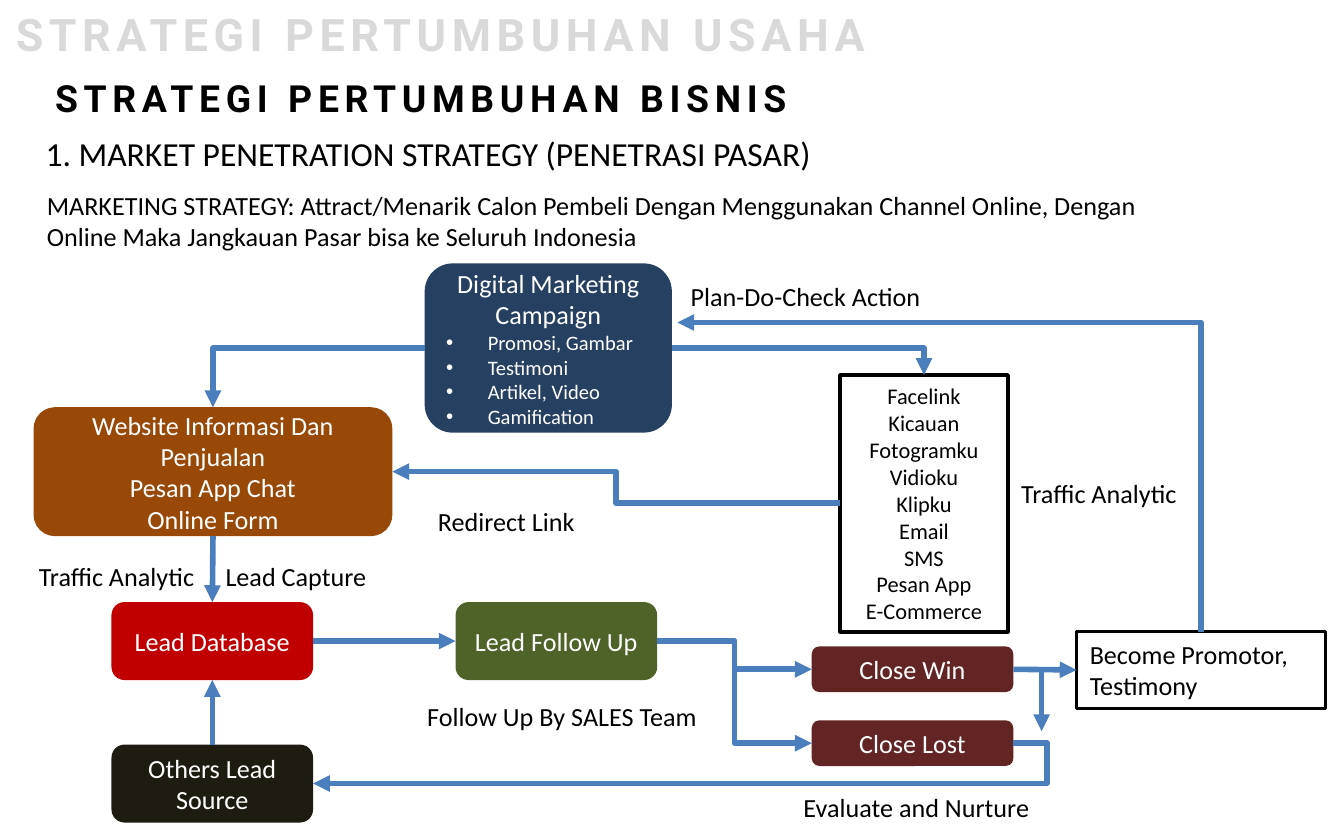
from lxml import etree
from pptx import Presentation
from pptx.dml.color import RGBColor
from pptx.enum import shapes, text
from pptx.oxml import ns
from pptx.util import Inches, Pt

BLACK, WHITE, BLUE = "000000", "FFFFFF", "4B7EBC"
LEFT, CENTER = text.PP_ALIGN.LEFT, text.PP_ALIGN.CENTER
TOP, MIDDLE = text.MSO_ANCHOR.TOP, text.MSO_ANCHOR.MIDDLE
ELBOW, STRAIGHT = shapes.MSO_CONNECTOR.ELBOW, shapes.MSO_CONNECTOR.STRAIGHT
SITE_TOP, SITE_LEFT, SITE_BOTTOM, SITE_RIGHT = range(4)


def write_text(shape, lines, size, color, align=LEFT, anchor=TOP, font="Calibri", spacing=None):
    """Fill a shape with one paragraph per line; spacing marks a bold, letter-spaced heading."""
    frame = shape.text_frame
    frame.vertical_anchor = anchor
    for index, line in enumerate(lines):
        paragraph = frame.add_paragraph() if index else frame.paragraphs[0]
        paragraph.alignment = align
        run = paragraph.add_run()
        run.text = line
        run.font.name = font
        run.font.size = Pt(size)
        run.font.color.rgb = RGBColor.from_string(color)
        if spacing:
            run.font.bold = True
            run.font._element.set("spc", str(spacing * 100))


def connect(kind, start, end, arrow="tailEnd", preset=None, adjust=None):
    """Draw an arrow; each end is a (shape, site) pair or an (x, y) point in inches."""
    line = slide.shapes.add_connector(kind, 0, 0, 0, 0)
    if isinstance(start[0], (int, float)):
        line.begin_x, line.begin_y = map(Inches, start)
    else:
        line.begin_connect(*start)
    if isinstance(end[0], (int, float)):
        line.end_x, line.end_y = map(Inches, end)
    else:
        line.end_connect(*end)
    line.line.color.rgb = RGBColor.from_string(BLUE)
    line.line.width = Pt(3)
    properties = line._element.spPr
    outline = properties.find(ns.qn("a:ln"))
    etree.SubElement(outline, ns.qn("a:" + arrow), type="triangle")
    etree.SubElement(properties, ns.qn("a:effectLst"))
    geometry = properties.find(ns.qn("a:prstGeom"))
    if preset:
        geometry.set("prst", preset)
    if adjust is not None:
        guides = geometry.find(ns.qn("a:avLst"))
        etree.SubElement(guides, ns.qn("a:gd"), name="adj1", fmla=f"val {adjust}")


presentation = Presentation()
presentation.slide_width, presentation.slide_height = Inches(10), Inches(6.25)
slide = presentation.slides.add_slide(presentation.slide_layouts[5])

# Headings
title = slide.shapes.title
title.left, title.top, title.width, title.height = map(Inches, (0.31, 0.51, 9.42, 0.44))
write_text(title, ["STRATEGI PERTUMBUHAN BISNIS"], 20, BLACK, font="Roboto", spacing=3)
banner = slide.shapes.add_textbox(*map(Inches, (0.02, 0, 10, 0.5)))
banner.text_frame.word_wrap = True
write_text(banner, ["STRATEGI PERTUMBUHAN USAHA"], 24, "D9D9D9", font="Roboto", spacing=3)

# Plain text and arrow labels: left, top, width, height, size, wrap, wording
labels = [
    (0.24, 0.94, 5.95, 0.4, 18, False, "1. MARKET PENETRATION STRATEGY (PENETRASI PASAR)"),
    (0.25, 1.36, 8.67, 0.57, 14, True,
     "MARKETING STRATEGY: Attract/Menarik Calon Pembeli Dengan Menggunakan Channel Online, "
     "Dengan Online Maka Jangkauan Pasar bisa ke Seluruh Indonesia"),
    (3.16, 3.71, 1.23, 0.34, 14, False, "Redirect Link"),
    (3.08, 5.16, 2.22, 0.34, 14, False, "Follow Up By SALES Team"),
    (1.58, 4.12, 1.26, 0.34, 14, False, "Lead Capture"),
    (0.19, 4.12, 1.38, 0.34, 14, False, "Traffic Analytic"),
    (7.5, 3.5, 1.38, 0.34, 14, False, "Traffic Analytic"),
    (5.04, 2.04, 1.93, 0.34, 14, False, "Plan-Do-Check Action"),
    (5.88, 5.84, 1.96, 0.34, 14, True, "Evaluate and Nurture"),
]
for left, top, width, height, size, wrap, wording in labels:
    label = slide.shapes.add_textbox(*map(Inches, (left, top, width, height)))
    label.text_frame.word_wrap = wrap
    write_text(label, [wording], size, BLACK)

# Filled steps: left, top, width, height, fill, lines
steps = {
    "campaign": (3.16, 1.96, 1.84, 1.26, "254061",
                 ["Digital Marketing Campaign", "Promosi, Gambar", "Testimoni",
                  "Artikel, Video", "Gamification"]),
    "website": (0.25, 3.03, 2.67, 0.96, "984807",
                ["Website Informasi Dan Penjualan", "Pesan App Chat", "Online Form"]),
    "database": (0.83, 4.48, 1.5, 0.58, "C00000", ["Lead Database"]),
    "follow_up": (3.39, 4.48, 1.5, 0.58, "4F6228", ["Lead Follow Up"]),
    "win": (6.04, 4.81, 1.5, 0.34, "632523", ["Close Win"]),
    "lost": (6.04, 5.36, 1.5, 0.34, "632523", ["Close Lost"]),
    "others": (0.83, 5.54, 1.5, 0.58, "1E1C11", ["Others Lead Source"]),
}
boxes = {}
for name, (left, top, width, height, fill, lines) in steps.items():
    box = slide.shapes.add_shape(shapes.MSO_SHAPE.ROUNDED_RECTANGLE,
                                 *map(Inches, (left, top, width, height)))
    box.shadow.inherit = False
    box.fill.solid()
    box.fill.fore_color.rgb = RGBColor.from_string(fill)
    box.line.fill.background()
    write_text(box, lines, 14, WHITE, CENTER, MIDDLE)
    boxes[name] = box

for paragraph in boxes["campaign"].text_frame.paragraphs[1:]:
    paragraph.alignment = LEFT
    paragraph.runs[0].font.size = Pt(11)
    bullet = paragraph._p.get_or_add_pPr()
    bullet.set("marL", str(Inches(0.31)))
    bullet.set("indent", str(-Inches(0.31)))
    etree.SubElement(bullet, ns.qn("a:buFont"), typeface="Arial")
    etree.SubElement(bullet, ns.qn("a:buChar"), char="•")

# Outlined boxes: left, top, width, height, line width, size, align, anchor, lines
outlined = {
    "channels": (6.25, 2.79, 1.25, 1.91, 2, 12, CENTER, MIDDLE,
                 ["Facelink", "Kicauan", "Fotogramku", "Vidioku", "Klipku", "Email", "SMS",
                  "Pesan App", "E-Commerce"]),
    "promotor": (8.01, 4.7, 1.85, 0.57, 1.5, 14, LEFT, TOP, ["Become Promotor, Testimony"]),
}
for name, (left, top, width, height, weight, size, align, anchor, lines) in outlined.items():
    box = slide.shapes.add_shape(shapes.MSO_SHAPE.RECTANGLE,
                                 *map(Inches, (left, top, width, height)))
    box.shadow.inherit = False
    box.fill.background()
    box.line.color.rgb = RGBColor.from_string(BLACK)
    box.line.width = Pt(weight)
    write_text(box, lines, size, BLACK, align, anchor)
    boxes[name] = box

# Straight arrows
for start, start_site, end, end_site in [
    ("website", SITE_BOTTOM, "database", SITE_TOP),
    ("database", SITE_RIGHT, "follow_up", SITE_LEFT),
    ("others", SITE_TOP, "database", SITE_BOTTOM),
    ("win", SITE_RIGHT, "promotor", SITE_LEFT),
]:
    connect(STRAIGHT, (boxes[start], start_site), (boxes[end], end_site))
connect(STRAIGHT, (7.75, 4.98), (7.75, 5.44))

# Bent arrows
for start, start_site, end, end_site, preset, adjust in [
    ("channels", SITE_LEFT, "website", SITE_RIGHT, None, None),
    ("campaign", SITE_RIGHT, "channels", SITE_TOP, "bentConnector2", None),
    ("campaign", SITE_LEFT, "website", SITE_TOP, "bentConnector2", None),
    ("follow_up", SITE_RIGHT, "win", SITE_LEFT, None, None),
    ("follow_up", SITE_RIGHT, "lost", SITE_LEFT, None, None),
    ("lost", SITE_RIGHT, "others", SITE_RIGHT, None, -4800),
]:
    connect(ELBOW, (boxes[start], start_site), (boxes[end], end_site), preset=preset, adjust=adjust)
connect(ELBOW, (5.04, 2.4), (boxes["promotor"], SITE_TOP), "headEnd", "bentConnector2")

presentation.save("out.pptx")
